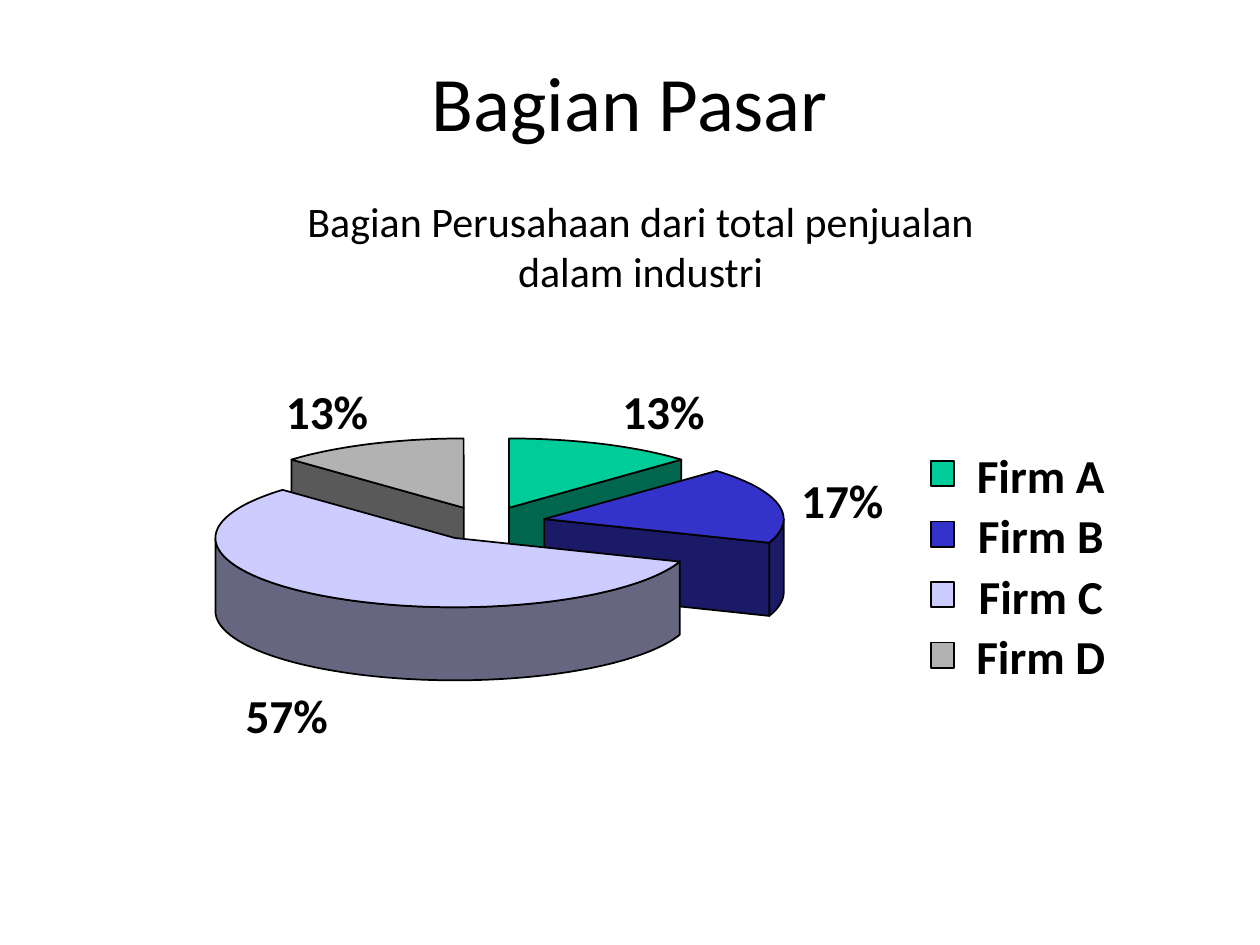
import math

import pptx
import pptx.dml.color
import pptx.enum.shapes
import pptx.enum.text
import pptx.util

Inches = pptx.util.Inches
RADIUS_X, RADIUS_Y, DEPTH = 1.9, 0.55, 0.58

deck = pptx.Presentation()
deck.slide_width, deck.slide_height = Inches(10), Inches(7.5)
slide = deck.slides.add_slide(deck.slide_layouts[6])


def paint(shape, fill):
    shape.shadow.inherit = False
    shape.fill.solid()
    shape.fill.fore_color.rgb = pptx.dml.color.RGBColor.from_string(fill)
    shape.line.color.rgb = pptx.dml.color.RGBColor.from_string("000000")
    shape.line.width = pptx.util.Pt(1)


def add_text(text, left, top, width, height, size, **frame_format):
    box = slide.shapes.add_textbox(Inches(left), Inches(top), Inches(width), Inches(height))
    for name, value in frame_format.items():
        setattr(box.text_frame, name, value)
    para = box.text_frame.paragraphs[0]
    para.text = text
    para.alignment = pptx.enum.text.PP_ALIGN.CENTER
    para.font.color.rgb = pptx.dml.color.RGBColor.from_string("000000")
    font_format = {"name": "Calibri", "size": pptx.util.Pt(size), "bold": size == 27}
    for name, value in font_format.items():
        setattr(para.font, name, value)


add_text("Bagian Pasar", 0.75, 0.17, 8.5, 1.25, 44, word_wrap=True,
         vertical_anchor=pptx.enum.text.MSO_ANCHOR.MIDDLE)
add_text("Bagian Perusahaan dari total penjualan dalam industri",
         2, 1.5, 6.17, 0.9, 24, word_wrap=True)

# Tip of the slice, start and end angle clockwise from the top, top and side
# colour, angle of the visible cut face, angles of the visible rim.
slices = [
    ((4.04, 4.03), 0, 46, "00CC99", "00664D", 46, None),
    ((3.68, 4.03), 314, 360, "B2B2B2", "595959", 314, None),
    ((4.32, 4.12), 46, 110, "3333CC", "1A1A66", 110, (90, 110)),
    ((3.61, 4.27), 110, 314, "CCCCFF", "666680", None, (110, 270)),
]
for tip, start, end, top_color, side_color, cut, rim in slices:
    edge = {
        angle: (tip[0] + RADIUS_X * math.sin(math.radians(angle)),
                tip[1] - RADIUS_Y * math.cos(math.radians(angle)))
        for angle in range(start, end + 1, 2)
    }
    upper_edges = []
    if rim:
        upper_edges.append([edge[angle] for angle in range(rim[0], rim[1] + 1, 2)])
    if cut is not None:
        upper_edges.append([tip, edge[cut]])
    faces = [
        (upper + [(x, y + DEPTH) for x, y in reversed(upper)], side_color)
        for upper in upper_edges
    ]
    faces.append(([tip, *edge.values()], top_color))
    for points, color in faces:
        corners = [(Inches(x), Inches(y)) for x, y in points]
        outline = slide.shapes.build_freeform(*corners[0])
        outline.add_line_segments(corners[1:], close=True)
        paint(outline.convert_to_shape(), color)

label_format = {"word_wrap": False, "margin_left": 0, "margin_right": 0,
                "margin_top": 0, "margin_bottom": 0}
shares = [("13%", 4.89, 3.03), ("17%", 6.31, 3.74), ("57%", 1.9, 5.45), ("13%", 2.22, 3.03)]
for share, left, top in shares:
    add_text(share, left, top, 0.75, 0.45, 27, **label_format)

legend = [("Firm A", "00CC99"), ("Firm B", "3333CC"), ("Firm C", "CCCCFF"), ("Firm D", "B2B2B2")]
for row, (firm, color) in enumerate(legend):
    top = 3.54 + 0.48 * row
    marker = slide.shapes.add_shape(pptx.enum.shapes.MSO_SHAPE.RECTANGLE, Inches(7.39),
                                    Inches(top + 0.12), Inches(0.18), Inches(0.2))
    paint(marker, color)
    add_text(firm, 7.67, top, 1.18, 0.45, 27, **label_format)

deck.save("out.pptx")
